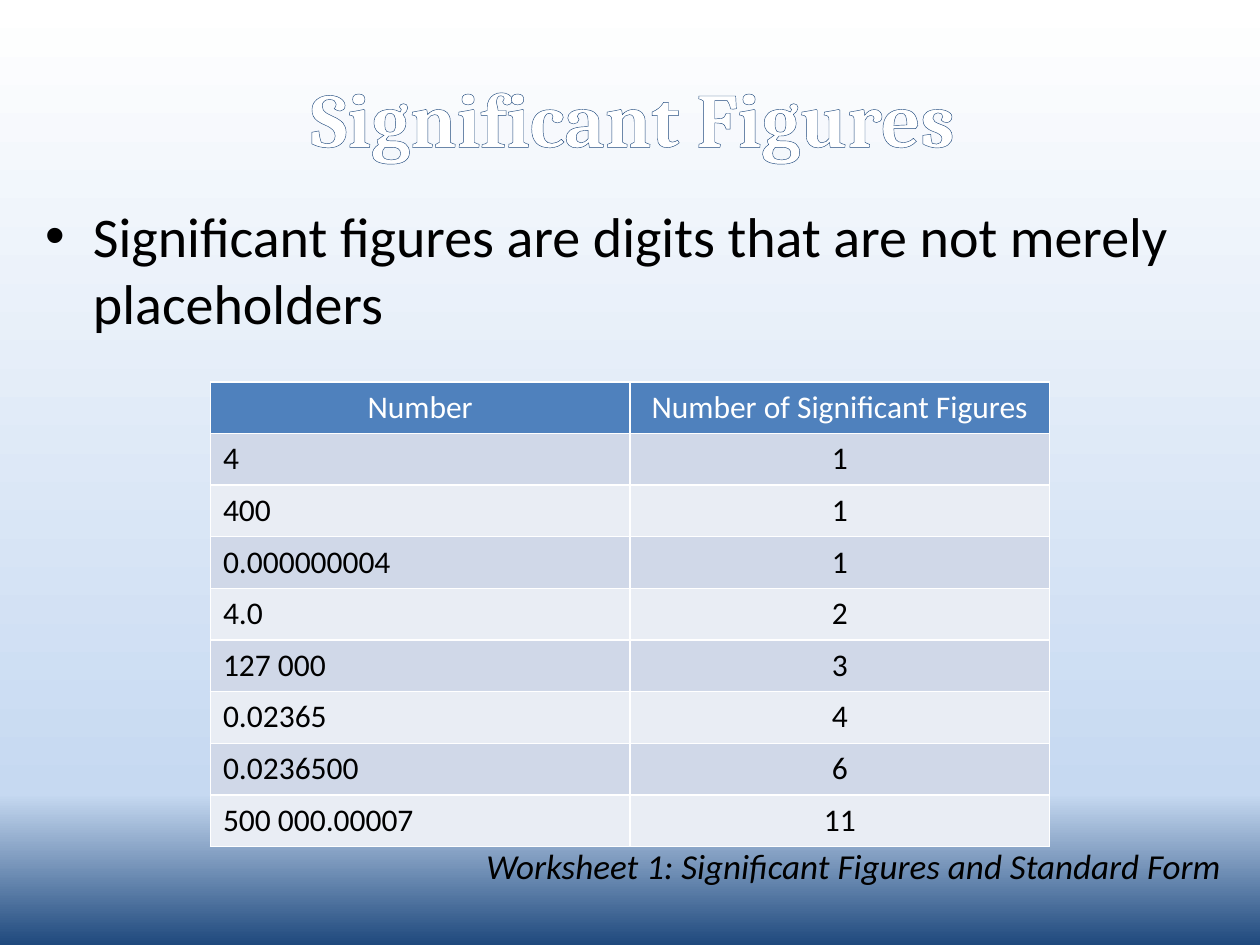
from lxml.etree import SubElement
from pptx import Presentation
from pptx.dml.color import RGBColor
from pptx.enum.text import MSO_ANCHOR, PP_ALIGN
from pptx.oxml.ns import qn
from pptx.util import Inches, Pt

WHITE = RGBColor(0xFF, 0xFF, 0xFF)
BLACK = RGBColor(0, 0, 0)
NAVY = RGBColor(0x1F, 0x49, 0x7D)
SKY = RGBColor(0xC6, 0xD9, 0xF1)
HEADER = RGBColor(0x4F, 0x81, 0xBD)
BANDS = [RGBColor(0xD0, 0xD8, 0xE8), RGBColor(0xE9, 0xED, 0xF4)]

TITLE = "Significant Figures"
DEFINITION = "Significant figures are digits that are not merely placeholders"
WORKSHEET = "Worksheet 1: Significant Figures and Standard Form"
ROWS = [
    ("Number", "Number of Significant Figures"),
    ("4", "1"),
    ("400", "1"),
    ("0.000000004", "1"),
    ("4.0", "2"),
    ("127 000", "3"),
    ("0.02365", "4"),
    ("0.0236500", "6"),
    ("500 000.00007", "11"),
]
BACKGROUND = [(0, NAVY), (16, SKY), (100, WHITE)]
LEFT, WIDTH = 0.26, 9.53
COL_WIDTH, ROW_HEIGHT = 3.33, 0.41


def add_text(p, text, size, color, font="Calibri", align=PP_ALIGN.LEFT):
    p.alignment = align
    r = p.add_run()
    r.text = text
    r.font.name = font
    r.font.size = Pt(size)
    r.font.color.rgb = color
    return r


def add_box(s, top, height):
    tf = s.shapes.add_textbox(
        Inches(LEFT), Inches(top), Inches(WIDTH), Inches(height)
    ).text_frame
    tf.word_wrap = True
    return tf.paragraphs[0]


def set_background(s):
    fill = s.background.fill
    fill.gradient()
    fill.gradient_angle = 90
    stops = s._element.find(".//" + qn("a:gsLst"))
    for stop in list(stops):
        stops.remove(stop)
    for pos, color in BACKGROUND:
        stop = SubElement(stops, qn("a:gs"), pos=str(pos * 1000))
        SubElement(stop, qn("a:srgbClr"), val=str(color))


def add_title(s):
    title = s.shapes.title
    title.left, title.top = Inches(LEFT), Inches(0.3)
    title.width, title.height = Inches(WIDTH), Inches(1.25)
    tf = title.text_frame
    tf.vertical_anchor = MSO_ANCHOR.MIDDLE
    r = add_text(tf.paragraphs[0], TITLE, 44, WHITE, "Cambria", PP_ALIGN.CENTER)
    r.font.bold = True
    rPr = r._r.get_or_add_rPr()
    ln = SubElement(rPr, qn("a:ln"), w=str(Pt(2.48)))
    rPr.insert(0, ln)
    outline = SubElement(ln, qn("a:solidFill"))
    SubElement(outline, qn("a:srgbClr"), val=str(NAVY))


def add_definition(s):
    p = add_box(s, 1.55, 1.3)
    add_text(p, DEFINITION, 32, BLACK)
    pPr = p._p.get_or_add_pPr()
    indent = Inches(0.38)
    pPr.set("marL", str(indent))
    pPr.set("indent", str(-indent))
    SubElement(pPr, qn("a:buFont"), typeface="Arial")
    SubElement(pPr, qn("a:buChar"), char="•")


def add_figures_table(s):
    table = s.shapes.add_table(
        len(ROWS), 2, Inches(1.67), Inches(3.03),
        Inches(2 * COL_WIDTH), Inches(len(ROWS) * ROW_HEIGHT),
    ).table
    for i, values in enumerate(ROWS):
        for j, value in enumerate(values):
            cell = table.cell(i, j)
            cell.fill.solid()
            cell.fill.fore_color.rgb = BANDS[(i - 1) % 2] if i else HEADER
            align = PP_ALIGN.LEFT if i and j == 0 else PP_ALIGN.CENTER
            r = add_text(cell.text_frame.paragraphs[0], value, 18,
                         BLACK if i else WHITE, align=align)
            r.font.bold = False


def main():
    prs = Presentation()
    prs.slide_width, prs.slide_height = Inches(10), Inches(7.5)
    s = prs.slides.add_slide(prs.slide_layouts[5])
    set_background(s)
    add_title(s)
    add_definition(s)
    add_figures_table(s)
    p = add_box(s, 6.65, 0.45)
    add_text(p, WORKSHEET, 20, BLACK, align=PP_ALIGN.RIGHT).font.italic = True
    prs.save("out.pptx")


if __name__ == "__main__":
    main()
